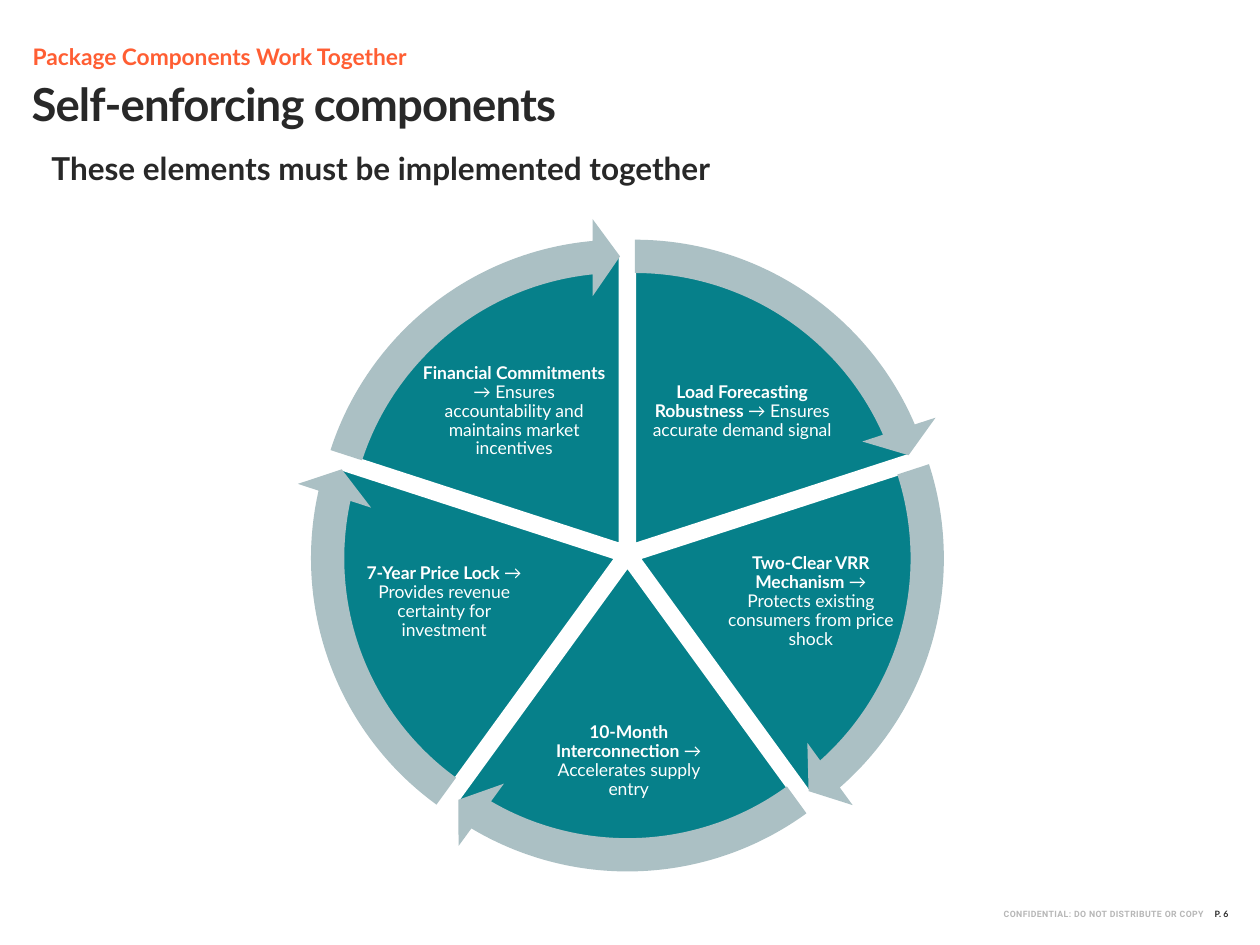
import math
import pptx
import pptx.dml.color
import pptx.enum.shapes
import pptx.enum.text
import pptx.util
from pptx.util import Inches

THEME = {
    "font": "Lato", "footer_font": "Roboto",
    "ink": "282828", "accent": "FF5E33", "muted": "B7B7B7",
    "wedge": "06808A", "arrow": "ABC0C4", "white": "FFFFFF",
    "title": 26, "kicker": 13, "statement": 18, "label": 10, "footer": 5,
}
TITLE = "Self-enforcing components"
KICKER = "Package Components Work Together"
STATEMENT = "These elements must be implemented together"
CONFIDENTIALITY = "CONFIDENTIAL: DO NOT DISTRIBUTE OR COPY"
PAGE = "P. 6"
COMPONENTS = [
    ("Load Forecasting Robustness", "Ensures accurate demand signal", (5.15, 2.77, 1.48, 0.99)),
    ("Two-Clear VRR Mechanism", "Protects existing consumers from price shock", (5.75, 4.23, 1.37, 1.1)),
    ("10-Month Interconnection", "Accelerates supply entry", (4.33, 5.44, 1.32, 1.21)),
    ("7-Year Price Lock", "Provides revenue certainty for investment", (2.84, 4.23, 1.37, 1.1)),
    ("Financial Commitments", "Ensures accountability and maintains market incentives", (3.34, 2.77, 1.48, 0.99)),
]
CENTER_X, CENTER_Y, SPREAD = 4.98, 4.4, 0.1
WEDGE_SIZE, ARROW_SIZE = 4.61, 5.18
START_ANGLE, SWEEP = 270, 360 / len(COMPONENTS)
HEAD_ANGLE = 5.46
ARROW_THICKNESS, HEAD_WIDTH = 0.051, 0.059
UNITS_PER_DEGREE = 0.6

ALIGN = pptx.enum.text.PP_ALIGN
ANCHOR = pptx.enum.text.MSO_ANCHOR
SHAPE = pptx.enum.shapes.MSO_SHAPE


def rgb(name):
    return pptx.dml.color.RGBColor.from_string(THEME[name])


def style(run, size, color, bold=True, font="font", spacing=0):
    run.font.name = THEME[font]
    run.font.size = pptx.util.Pt(THEME[size])
    run.font.bold = bold
    run.font.color.rgb = rgb(color)
    if spacing:
        run.font._element.set("spc", str(spacing))


def set_frame(holder, inset=0, anchor=ANCHOR.TOP, wrap=True):
    frame = holder.text_frame
    frame.word_wrap = wrap
    frame.auto_size = pptx.enum.text.MSO_AUTO_SIZE.NONE
    frame.vertical_anchor = anchor
    frame.margin_left = frame.margin_right = Inches(inset)
    frame.margin_top = frame.margin_bottom = Inches(min(inset, 0.05))
    return frame


def write_line(holder, text, size, color, align=ALIGN.LEFT, inset=0, wrap=True, **run_style):
    frame = set_frame(holder, inset, wrap=wrap)
    frame.text = text
    paragraph = frame.paragraphs[0]
    paragraph.alignment = align
    paragraph.space_before = pptx.util.Pt(0)
    style(paragraph.runs[0], size, color, **run_style)
    return paragraph


def place(holder, left, top, width, height):
    holder.left, holder.top = Inches(left), Inches(top)
    holder.width, holder.height = Inches(width), Inches(height)


def add_text(slide, *box):
    return slide.shapes.add_textbox(*map(Inches, box))


def add_ring_part(slide, kind, index, size, color, adjustments):
    bisector = math.radians(START_ANGLE + SWEEP * (index + 0.5))
    left = CENTER_X + SPREAD * math.cos(bisector) - size / 2
    top = CENTER_Y + SPREAD * math.sin(bisector) - size / 2
    part = slide.shapes.add_shape(kind, Inches(left), Inches(top), Inches(size), Inches(size))
    for position, value in enumerate(adjustments):
        part.adjustments[position] = value
    part.shadow.inherit = False
    part.fill.solid()
    part.fill.fore_color.rgb = rgb(color)
    return part


def angle_value(degrees):
    return degrees % 360 * UNITS_PER_DEGREE


def add_wedge(slide, index):
    start = START_ANGLE + SWEEP * index
    wedge = add_ring_part(slide, SHAPE.PIE, index, WEDGE_SIZE, "wedge",
                          [angle_value(start), angle_value(start + SWEEP)])
    wedge.line.color.rgb = rgb("white")
    wedge.line.width = pptx.util.Pt(1.5)


def add_label(slide, name, effect, box):
    frame = set_frame(add_text(slide, *box), 0.01, ANCHOR.MIDDLE)
    paragraph = frame.paragraphs[0]
    paragraph.alignment = ALIGN.CENTER
    paragraph.line_spacing = 0.9
    for text, bold in ((name, True), (f" → {effect}", False)):
        run = paragraph.add_run()
        run.text = text
        style(run, "label", "white", bold)


def add_arrow(slide, index):
    start = START_ANGLE + SWEEP * index
    arrow = add_ring_part(slide, SHAPE.CIRCULAR_ARROW, index, ARROW_SIZE, "arrow", [
        ARROW_THICKNESS, angle_value(HEAD_ANGLE), angle_value(start + SWEEP - HEAD_ANGLE),
        angle_value(start), HEAD_WIDTH])
    arrow.line.fill.background()


def main():
    deck = pptx.Presentation()
    deck.slide_width, deck.slide_height = Inches(10), Inches(7.5)
    slide = deck.slides.add_slide(deck.slide_layouts[1])

    title, kicker = slide.shapes.title, slide.placeholders[1]
    place(title, 0.25, 0.6, 9.56, 0.44)
    write_line(title, TITLE, "title", "ink", spacing=-50)
    place(kicker, 0.26, 0.34, 9.55, 0.51)
    properties = write_line(kicker, KICKER, "kicker", "accent")._p.get_or_add_pPr()
    properties.set("marL", "0")
    properties.set("indent", "0")
    properties.append(pptx.oxml.parse_xml(
        '<a:buNone xmlns:a="http://schemas.openxmlformats.org/drawingml/2006/main"/>'))

    for index, (name, effect, box) in enumerate(COMPONENTS):
        add_wedge(slide, index)
        add_label(slide, name, effect, box)
    for index in range(len(COMPONENTS)):
        add_arrow(slide, index)

    write_line(add_text(slide, 0.31, 1.13, 5.73, 0.71), STATEMENT, "statement", "ink",
               inset=0.1, wrap=False)
    write_line(add_text(slide, 5.96, 7.21, 3.6, 0.08), CONFIDENTIALITY, "footer", "muted",
               ALIGN.RIGHT, font="footer_font", spacing=20)
    write_line(add_text(slide, 9.56, 7.21, 0.19, 0.08), PAGE, "footer", "ink", ALIGN.RIGHT, wrap=False)
    deck.save("out.pptx")


if __name__ == "__main__":
    main()
